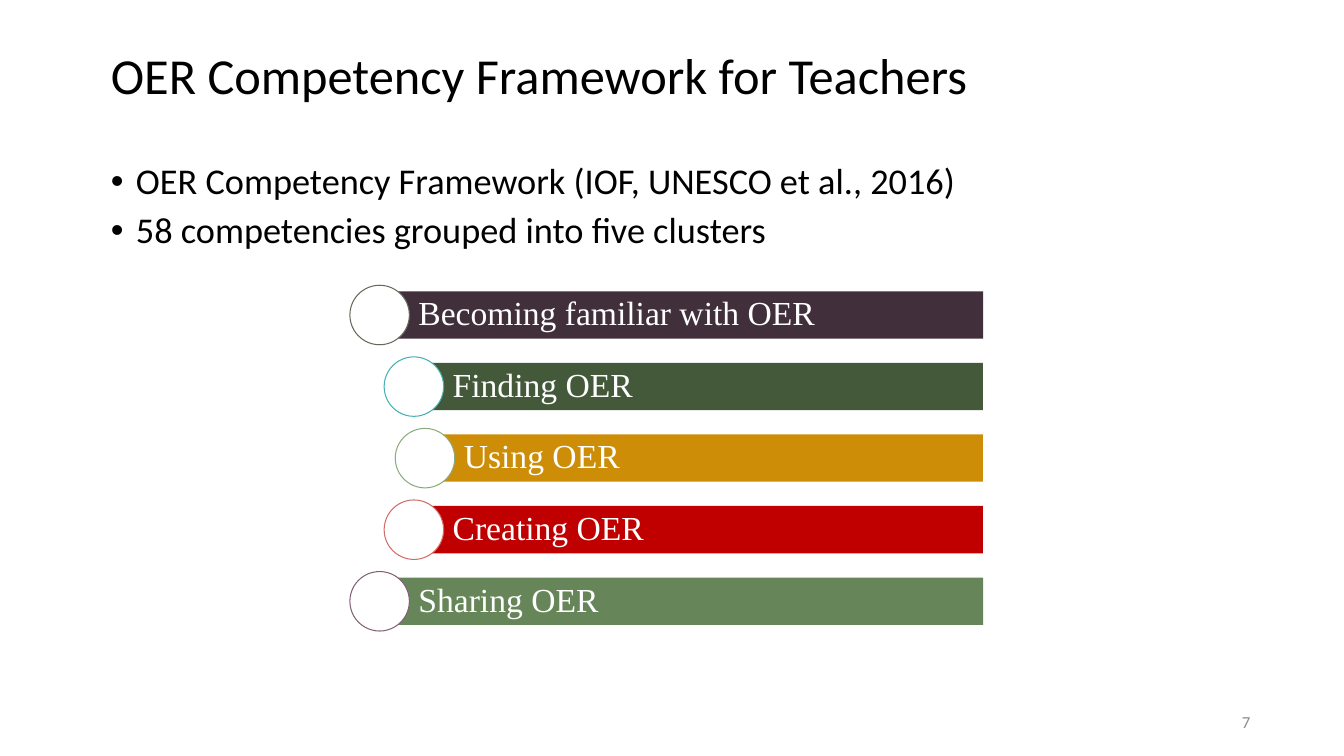
from lxml import etree
from pptx import Presentation
from pptx import util as u
from pptx.dml.color import RGBColor
from pptx.enum import shapes, text
from pptx.oxml.ns import qn

BLACK = RGBColor(0x00, 0x00, 0x00)
WHITE = RGBColor(0xFF, 0xFF, 0xFF)
GREY = RGBColor(0x8C, 0x8C, 0x8C)
PLUM = RGBColor(0x41, 0x30, 0x3B)
FOREST = RGBColor(0x44, 0x59, 0x3A)
AMBER = RGBColor(0xCD, 0x8D, 0x06)
RED = RGBColor(0xC0, 0x00, 0x00)
SAGE = RGBColor(0x66, 0x85, 0x58)
TAUPE = RGBColor(0x64, 0x69, 0x59)
TEAL = RGBColor(0x45, 0xB1, 0xB5)
MINT = RGBColor(0x8C, 0xAA, 0x7C)
CORAL = RGBColor(0xD2, 0x6D, 0x66)
MAUVE = RGBColor(0x82, 0x60, 0x75)

TITLE = "OER Competency Framework for Teachers"
BULLETS = [
    "OER Competency Framework (IOF, UNESCO et al., 2016)",
    "58 competencies grouped into five clusters",
]
CLUSTERS = [
    ("Becoming familiar with OER", 377, PLUM, TAUPE),
    ("Finding OER", 411, FOREST, TEAL),
    ("Using OER", 422, AMBER, MINT),
    ("Creating OER", 411, RED, CORAL),
    ("Sharing OER", 377, SAGE, MAUVE),
]
PAGE = "7"

PX = 9144
BAR_TOP, BAR_PITCH, BAR_H, BAR_RIGHT = 289, 71, 47, 975
CIRCLE = 59
INSETS = (10, 5, 10, 5)
BAR_INSETS = (38, 7, 7, 7)
TITLE_FONT = {"name": "Calibri", "size": u.Pt(36)}
BODY_FONT = {"name": "Calibri", "size": u.Pt(25.9)}
BAR_FONT = {"name": "Times New Roman", "size": u.Pt(24)}
PAGE_FONT = {"name": "Calibri", "size": u.Pt(12)}


def box(*lengths):
    return [n * PX for n in lengths]


def write(sp, lines, font, color, insets=INSETS, anchor=text.MSO_ANCHOR.MIDDLE,
          align=text.PP_ALIGN.LEFT, spacing=0.9):
    tf = sp.text_frame
    left, top, right, bottom = box(*insets)
    frame = {"word_wrap": True, "auto_size": text.MSO_AUTO_SIZE.NONE,
             "vertical_anchor": anchor, "margin_left": left, "margin_top": top,
             "margin_right": right, "margin_bottom": bottom}
    for key, value in frame.items():
        setattr(tf, key, value)
    for i, line in enumerate(lines):
        p = tf.add_paragraph() if i else tf.paragraphs[0]
        p.alignment, p.line_spacing = align, spacing
        p.space_before = u.Pt(7 if i else 0)
        r = p.add_run()
        r.text = line
        for key, value in font.items():
            setattr(r.font, key, value)
        r.font.color.rgb = color
    return tf


def add_bullets(tf):
    for p in tf.paragraphs:
        pPr = p._p.get_or_add_pPr()
        pPr.set("marL", str(25 * PX))
        pPr.set("indent", str(-25 * PX))
        etree.SubElement(pPr, qn("a:buFont")).set("typeface", "Arial")
        etree.SubElement(pPr, qn("a:buChar")).set("char", "•")


def add_filled(s, kind, place, fill):
    sp = s.shapes.add_shape(kind, *box(*place))
    sp.shadow.inherit = False
    sp.fill.solid()
    sp.fill.fore_color.rgb = fill
    return sp


def add_cluster(s, row, label, left, fill, outline):
    top = BAR_TOP + row * BAR_PITCH
    bar = add_filled(s, shapes.MSO_SHAPE.RECTANGLE,
                     (left, top, BAR_RIGHT - left, BAR_H), fill)
    bar.line.fill.background()
    write(bar, [label], BAR_FONT, WHITE, BAR_INSETS)
    circle = add_filled(s, shapes.MSO_SHAPE.OVAL,
                        (left - 30, top - 6, CIRCLE, CIRCLE), WHITE)
    circle.line.color.rgb = outline
    circle.line.width = u.Pt(0.75)


def main():
    prs = Presentation()
    prs.slide_width, prs.slide_height = box(1333, 750)
    s = prs.slides.add_slide(prs.slide_layouts[5])

    title = s.shapes.title
    title.left, title.top, title.width, title.height = box(100, 28, 1134, 99)
    write(title, [TITLE], TITLE_FONT, BLACK)

    body = s.shapes.add_textbox(*box(100, 157, 1121, 99))
    add_bullets(write(body, BULLETS, BODY_FONT, BLACK, anchor=text.MSO_ANCHOR.TOP))

    for row, cluster in enumerate(CLUSTERS):
        add_cluster(s, row, *cluster)

    number = s.shapes.add_textbox(*box(942, 697, 308, 38))
    write(number, [PAGE], PAGE_FONT, GREY, align=text.PP_ALIGN.RIGHT, spacing=1.0)
    prs.save("out.pptx")


if __name__ == "__main__":
    main()
